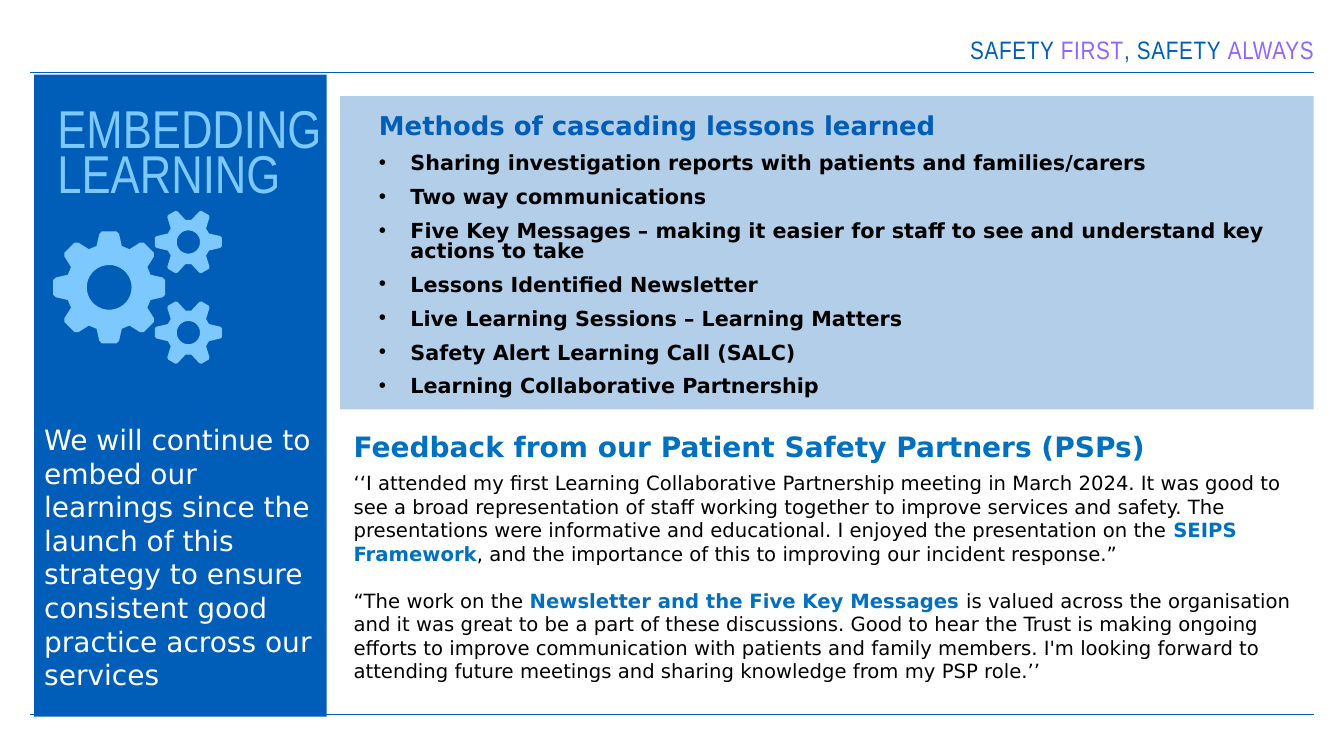
import math
import pptx
import pptx.dml.color
import pptx.enum.shapes
import pptx.enum.text
import pptx.oxml.ns
import pptx.oxml.xmlchemy
import pptx.util

Pt = pptx.util.Pt
ALIGN = pptx.enum.text.PP_ALIGN
ANCHOR = pptx.enum.text.MSO_ANCHOR
RECTANGLE = pptx.enum.shapes.MSO_SHAPE.RECTANGLE
new_element = pptx.oxml.xmlchemy.OxmlElement

# Content
COLORS = {"blue": "005EB8", "sky": "7DC8FF", "violet": "9164FF",
          "bright": "0070C0", "black": "000000", "white": "FFFFFF"}
NARROW, SANS = "Arial Narrow", "DejaVu Sans"
TAGLINE = [("SAFETY ", "blue"), ("FIRST", "violet"),
           (", SAFETY ", "blue"), ("ALWAYS", "violet")]
TITLE = "EMBEDDING LEARNING"
COMMITMENT = ("We will continue to embed our learnings since the launch of this "
              "strategy to ensure consistent good practice across our services")
METHODS_HEADING = "Methods of cascading lessons learned"
METHODS = [
    "Sharing investigation reports with patients and families/carers",
    "Two way communications",
    "Five Key Messages – making it easier for staff to see and understand key actions to take",
    "Lessons Identified Newsletter",
    "Live Learning Sessions – Learning Matters",
    "Safety Alert Learning Call (SALC)",
    "Learning Collaborative Partnership",
]
FEEDBACK_HEADING = "Feedback from our Patient Safety Partners (PSPs)"
# Each quote is a list of (words, highlighted)
QUOTES = [
    [("‘‘I attended my first Learning Collaborative Partnership meeting in March 2024. "
      "It was good to see a broad representation of staff working together to improve "
      "services and safety. The presentations were informative and educational. "
      "I enjoyed the presentation on the ", False),
     ("SEIPS Framework", True),
     (", and the importance of this to improving our incident response.”", False)],
    [("“The work on the ", False),
     ("Newsletter and the Five Key Messages ", True),
     ("is valued across the organisation and it was great to be a part of these "
      "discussions. Good to hear the Trust is making ongoing efforts to improve "
      "communication with patients and family members. I'm looking forward to "
      "attending future meetings and sharing knowledge from my PSP role.’’", False)],
]

# Layout: left, top, width, height
PAGE_W, PAGE_H = 960, 540
RULE_LEFT, RIGHT = 21.6, 938.4
RULES_Y = (51.8, 510.5)
TAGLINE_BOX = (326.4, 26.6, 612, 22.3)
SIDEBAR_BOX = (24.5, 53.3, 208.8, 458.6)
TITLE_BOX = (33.8, 77, 283.7, 159)
PANEL_BOX = (243, 68.6, 695.4, 223.9)
METHODS_BOX = (263.5, 77, 648.7, 217.4)
FEEDBACK_BOX = (245.5, 303.1, 695.5, 203.8)
# Gears: centre x, centre y, tip radius, root radius, hole radius,
# teeth, half angle at tip, half angle at root
SMALL = (24.1, 15.9, 8.3, 6, 10.5, 22.5)
GEARS = [(78, 205.3, 40.4, 30.9, 16, 8, 10.5, 17),
         (134.6, 172.9, *SMALL),
         (134.6, 237.6, *SMALL)]


def rgb(name):
    return pptx.dml.color.RGBColor.from_string(COLORS[name])


def place(shape, box):
    shape.left, shape.top, shape.width, shape.height = map(Pt, box)


def set_frame(shape, anchor=ANCHOR.TOP, margins=(7.2, 3.6, 7.2, 3.6)):
    frame = shape.text_frame
    frame.word_wrap = True
    frame.auto_size = pptx.enum.text.MSO_AUTO_SIZE.NONE
    frame.vertical_anchor = anchor
    (frame.margin_left, frame.margin_top,
     frame.margin_right, frame.margin_bottom) = map(Pt, margins)
    return frame


def set_spacing(paragraph, line=1.0, before=0, after=0, align=ALIGN.LEFT):
    paragraph.line_spacing = float(line)
    paragraph.space_before, paragraph.space_after = Pt(before), Pt(after)
    paragraph.alignment = align
    return paragraph


def add_run(paragraph, words, size, color, face=SANS, bold=False):
    run = paragraph.add_run()
    run.text = words
    run.font.size, run.font.name, run.font.bold = Pt(size), face, bold
    run.font.color.rgb = rgb(color)
    return run


def set_bullet(paragraph, mark=None, indent=0):
    props = paragraph._p.get_or_add_pPr()
    props.set("marL", str(int(Pt(indent))))
    props.set("indent", str(-int(Pt(indent))))
    if mark:
        font = new_element("a:buFont")
        font.set("typeface", "Arial")
        props.append(font)
        bullet = new_element("a:buChar")
        bullet.set("char", mark)
    else:
        bullet = new_element("a:buNone")
    props.append(bullet)


def finish_shape(shape, color):
    shape.shadow.inherit = False
    shape.fill.solid()
    shape.fill.fore_color.rgb = rgb(color)
    shape.line.fill.background()


def polar(x, y, radius, degrees):
    """A point in hundredths of a point."""
    angle = math.radians(degrees)
    return (100 * (x + radius * math.cos(angle)), 100 * (y + radius * math.sin(angle)))


def gear_contours(x, y, tip, root, hole, teeth, tip_half, root_half):
    tooth = [(root, -root_half), (tip * 0.96, -tip_half), (tip, -tip_half * 0.7),
             (tip, tip_half * 0.7), (tip * 0.96, tip_half), (root, root_half)]
    rim = [polar(x, y, radius, n * 360 / teeth + offset)
           for n in range(teeth) for radius, offset in tooth]
    bore = [polar(x, y, hole, -step) for step in range(0, 360, 10)]
    return [rim, bore]


prs = pptx.Presentation()
prs.slide_width, prs.slide_height = Pt(PAGE_W), Pt(PAGE_H)
slide = prs.slides.add_slide(prs.slide_layouts[1])
shapes = slide.shapes
title, methods = shapes.title, slide.placeholders[1]

# Rules above and below the content
for y in RULES_Y:
    rule = shapes.add_connector(pptx.enum.shapes.MSO_CONNECTOR.STRAIGHT,
                                Pt(RULE_LEFT), Pt(y), Pt(RIGHT), Pt(y))
    rule.line.color.rgb, rule.line.width = rgb("blue"), Pt(1)
    rule._element.spPr.append(new_element("a:effectLst"))

# Tagline
tagline = shapes.add_textbox(*map(Pt, TAGLINE_BOX))
frame = set_frame(tagline, ANCHOR.MIDDLE, (0, 3.6, 0, 3.6))
line = set_spacing(frame.paragraphs[0], 0.7, align=ALIGN.RIGHT)
for words, color in TAGLINE:
    add_run(line, words, 18, color, NARROW)._r.get_or_add_rPr().set("spc", "50")

# Sidebar with the commitment at its foot
sidebar = shapes.add_shape(RECTANGLE, *map(Pt, SIDEBAR_BOX))
finish_shape(sidebar, "blue")
frame = set_frame(sidebar, ANCHOR.BOTTOM, (7.2, 3.6, 7.2, 18))
add_run(set_spacing(frame.paragraphs[0]), COMMITMENT, 20, "white")

# Title, brought in front of the sidebar
title.element.getparent().append(title.element)
place(title, TITLE_BOX)
frame = set_frame(title)
add_run(set_spacing(frame.paragraphs[0], 0.7), TITLE, 38, "sky", NARROW)

# Gears
contours = [contour for gear in GEARS for contour in gear_contours(*gear)]
builder = shapes.build_freeform(*contours[0][0], scale=Pt(1) / 100)
for index, contour in enumerate(contours):
    if index:
        builder.move_to(*contour[0])
    builder.add_line_segments(contour[1:], close=True)
finish_shape(builder.convert_to_shape(), "sky")

# Methods panel and list
panel = shapes.add_shape(RECTANGLE, *map(Pt, PANEL_BOX))
finish_shape(panel, "blue")
alpha = new_element("a:alpha")
alpha.set("val", "30000")
panel._element.spPr.find(".//" + pptx.oxml.ns.qn("a:srgbClr")).append(alpha)

methods.element.getparent().append(methods.element)
place(methods, METHODS_BOX)
frame = set_frame(methods)
heading = set_spacing(frame.paragraphs[0], 0.9)
set_bullet(heading)
add_run(heading, METHODS_HEADING, 18.5, "blue", bold=True)
for method in METHODS:
    item = set_spacing(frame.add_paragraph(), 0.8, before=10)
    set_bullet(item, "•", 22.5)
    add_run(item, method, 14.8, "black", bold=True)

# Feedback
feedback = shapes.add_textbox(*map(Pt, FEEDBACK_BOX))
frame = set_frame(feedback)
heading = set_spacing(frame.paragraphs[0], after=6)
add_run(heading, FEEDBACK_HEADING, 20, "bright", bold=True)
for index, quote in enumerate(QUOTES):
    paragraph = set_spacing(frame.add_paragraph(), before=16.5 if index else 0)
    for words, highlighted in quote:
        add_run(paragraph, words, 14, "bright" if highlighted else "black", bold=highlighted)

prs.save("out.pptx")
